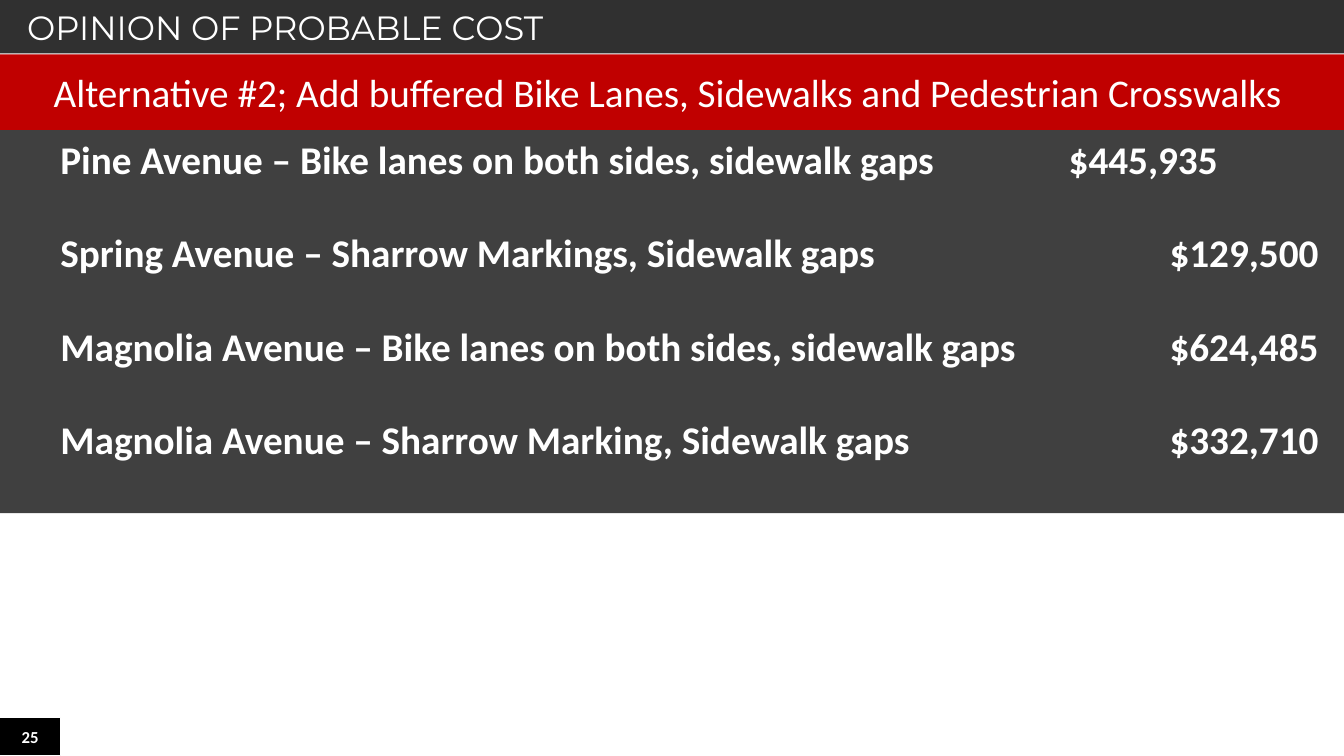
from dataclasses import dataclass

from lxml import etree
from pptx import Presentation
from pptx.dml import color
from pptx.enum import shapes, text
from pptx.oxml import ns
from pptx.util import Inches, Pt

COLORS = {
    "white": "FFFFFF",
    "black": "000000",
    "title": "303030",
    "alternative": "C00000",
    "costs": "404040",
}
SLIDE_WIDTH = 13.33
SLIDE_HEIGHT = 7.5


@dataclass
class Line:
    wording: str
    tab: float = 0


@dataclass
class Band:
    left: float
    top: float
    width: float
    height: float
    fill: str
    size: float
    lines: list[Line]
    font: str = "Calibri"
    bold: bool = False
    outline: str = ""
    align: text.PP_ALIGN = text.PP_ALIGN.LEFT
    anchor: text.MSO_ANCHOR = text.MSO_ANCHOR.MIDDLE
    inset_left: float = 0.1
    inset_right: float = 0.1
    gap: float = 0


COSTS = [
    Line("Pine Avenue – Bike lanes on both sides, sidewalk gaps\t$445,935", 10),
    Line("Spring Avenue – Sharrow Markings, Sidewalk gaps\t$129,500", 11),
    Line("Magnolia Avenue – Bike lanes on both sides, sidewalk gaps\t$624,485", 11),
    Line("Magnolia Avenue – Sharrow Marking, Sidewalk gaps\t$332,710", 11),
]

BANDS = [
    Band(0, 7.12, 0.6, 0.38, "black", 12, [Line("25")], bold=True,
         outline="white", align=text.PP_ALIGN.CENTER),
    Band(0, 0, SLIDE_WIDTH, 0.53, "title", 24,
         [Line("OPINION OF PROBABLE COST")], font="Montserrat", inset_left=0.27),
    Band(0, 0.54, SLIDE_WIDTH, 0.75, "alternative", 28,
         [Line("Alternative #2; Add buffered Bike Lanes, Sidewalks and Pedestrian Crosswalks")],
         align=text.PP_ALIGN.CENTER, inset_right=0.19),
    Band(0, 1.29, SLIDE_WIDTH, 3.8, "costs", 28, COSTS, bold=True,
         anchor=text.MSO_ANCHOR.TOP, inset_left=0.6, inset_right=0, gap=33.2),
]


def rgb(name: str) -> color.RGBColor:
    return color.RGBColor.from_string(COLORS[name])


def set_all(target, values: dict) -> None:
    for name, value in values.items():
        setattr(target, name, value)


def add_tab_stop(paragraph, position: float) -> None:
    tab_list = etree.SubElement(paragraph._p.get_or_add_pPr(), ns.qn("a:tabLst"))
    etree.SubElement(tab_list, ns.qn("a:tab"), pos=str(Inches(position)), algn="l")


def write_line(paragraph, line: Line, band: Band, space_before: float) -> None:
    if line.tab:
        add_tab_stop(paragraph, line.tab)
    set_all(paragraph, {"alignment": band.align, "space_before": Pt(space_before)})
    run = paragraph.add_run()
    run.text = line.wording
    set_all(run.font, {"name": band.font, "size": Pt(band.size), "bold": band.bold})
    run.font.color.rgb = rgb("white")


def draw_band(slide, band: Band) -> None:
    shape = slide.shapes.add_shape(
        shapes.MSO_SHAPE.RECTANGLE,
        Inches(band.left), Inches(band.top), Inches(band.width), Inches(band.height),
    )
    shape.shadow.inherit = False
    shape.fill.solid()
    shape.fill.fore_color.rgb = rgb(band.fill)
    if band.outline:
        shape.line.color.rgb = rgb(band.outline)
        shape.line.width = Pt(0.75)
    else:
        shape.line.fill.background()
    frame = shape.text_frame
    set_all(frame, {
        "word_wrap": True,
        "vertical_anchor": band.anchor,
        "margin_left": Inches(band.inset_left),
        "margin_right": Inches(band.inset_right),
        "margin_top": Inches(0.05),
        "margin_bottom": Inches(0.05),
    })
    for index, line in enumerate(band.lines):
        paragraph = frame.add_paragraph() if index else frame.paragraphs[0]
        write_line(paragraph, line, band, band.gap if index else 0)


def main() -> None:
    presentation = Presentation()
    presentation.slide_width = Inches(SLIDE_WIDTH)
    presentation.slide_height = Inches(SLIDE_HEIGHT)
    slide = presentation.slides.add_slide(presentation.slide_layouts[6])
    for band in BANDS:
        draw_band(slide, band)
    presentation.save("out.pptx")


if __name__ == "__main__":
    main()
